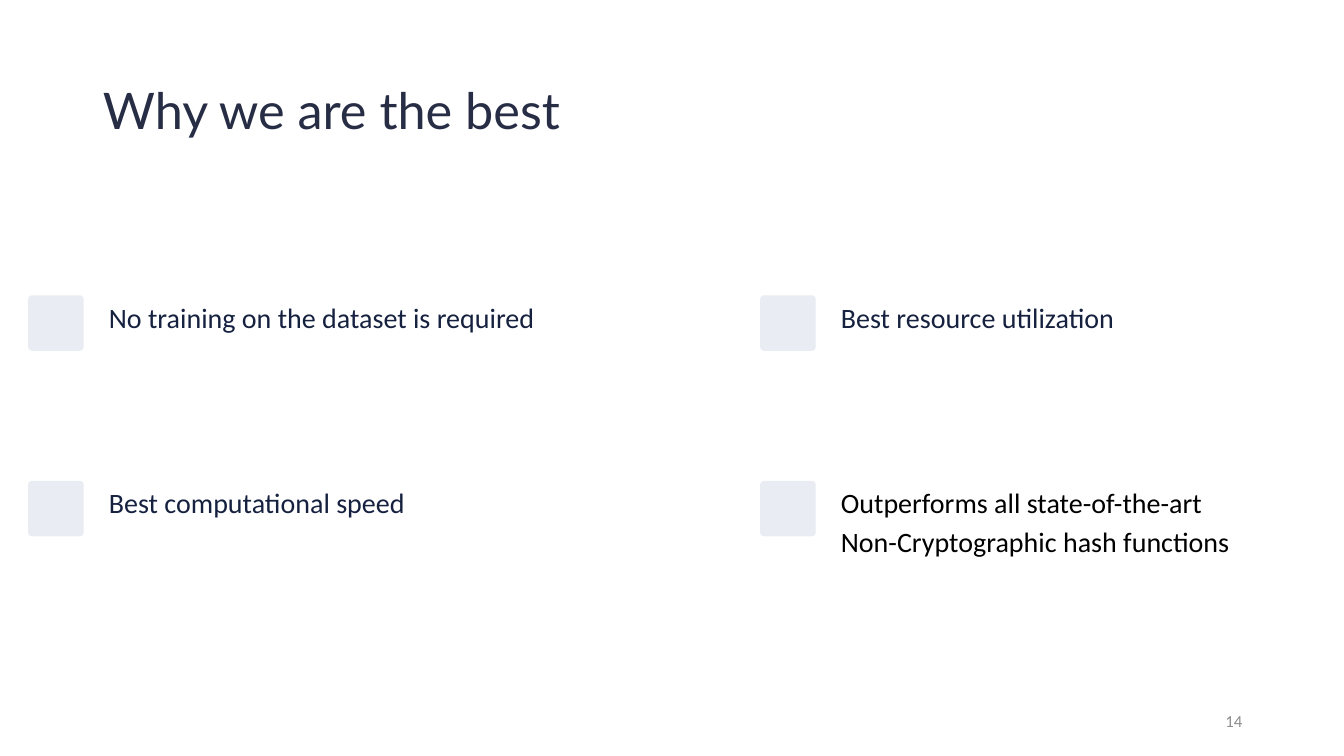
import dataclasses

import pptx
import pptx.dml.color
import pptx.enum.shapes
import pptx.enum.text
import pptx.slide
import pptx.text.text
import pptx.util

Inches = pptx.util.Inches
Pt = pptx.util.Pt
RGBColor = pptx.dml.color.RGBColor
ALIGN = pptx.enum.text.PP_ALIGN
ANCHOR = pptx.enum.text.MSO_ANCHOR

INK = RGBColor(0x27, 0x2D, 0x45)
NAVY = RGBColor(0x15, 0x21, 0x3F)
BLACK = RGBColor(0x00, 0x00, 0x00)
GREY = RGBColor(0x8C, 0x8C, 0x8C)
PALE = RGBColor(0xE9, 0xEC, 0xF2)

# Grid of reasons
LEFT, TOP = 0.28, 2.93
COL_STEP, ROW_STEP = 7.26, 1.84
TILE = 0.55
INDENT = 0.8


@dataclasses.dataclass(frozen=True)
class Reason:
    col: int
    row: int
    text: str
    color: RGBColor = NAVY
    width: float = 3.08
    height: float = 0.38


REASONS = [
    Reason(0, 0, "No training on the dataset is required"),
    Reason(1, 0, "Best resource utilization"),
    Reason(0, 1, "Best computational speed"),
    Reason(1, 1, "Outperforms all state-of-the-art\nNon-Cryptographic hash functions",
           BLACK, 4.6, 0.82),
]


def write(frame: pptx.text.text.TextFrame, text: str, *, size: float,
          color: RGBColor, font: str = "Calibri", align: ALIGN = ALIGN.LEFT,
          anchor: ANCHOR = ANCHOR.TOP, wrap: bool = True,
          space: float | pptx.util.Length | None = None,
          inset: float | None = None) -> None:
    """Fill a frame with one paragraph per line of text."""
    frame.text = text
    frame.auto_size = pptx.enum.text.MSO_AUTO_SIZE.NONE
    frame.word_wrap = wrap
    frame.vertical_anchor = anchor
    if inset is not None:
        frame.margin_left = frame.margin_right = Inches(inset)
        frame.margin_top = frame.margin_bottom = Inches(inset)
    for para in frame.paragraphs:
        para.alignment = align
        para.line_spacing = space
        for run in para.runs:
            run.font.name = font
            run.font.size = Pt(size)
            run.font.color.rgb = color


def add_reason(slide: pptx.slide.Slide, item: Reason) -> None:
    """Draw the tile and the text beside it."""
    left = LEFT + item.col * COL_STEP
    top = TOP + item.row * ROW_STEP
    tile = slide.shapes.add_shape(
        pptx.enum.shapes.MSO_SHAPE.ROUNDED_RECTANGLE,
        Inches(left), Inches(top), Inches(TILE), Inches(TILE))
    tile.adjustments[0] = 0.067
    tile.shadow.inherit = False
    tile.fill.solid()
    tile.fill.fore_color.rgb = PALE
    tile.line.fill.background()

    box = slide.shapes.add_textbox(
        Inches(left + INDENT), Inches(top), Inches(item.width), Inches(item.height))
    write(box.text_frame, item.text, size=20, color=item.color,
          wrap=False, space=Pt(27.5), inset=0)


def main() -> None:
    deck = pptx.Presentation()
    deck.slide_width, deck.slide_height = Inches(13.33), Inches(7.5)
    slide = deck.slides.add_slide(deck.slide_layouts.get_by_name("Title Only"))

    # Title
    title = slide.shapes.title
    title.left, title.top = Inches(0.92), Inches(0.4)
    title.width, title.height = Inches(11.5), Inches(1.45)
    write(title.text_frame, "Why we are the best", size=36, color=INK,
          font="Lato", anchor=ANCHOR.MIDDLE, space=0.9)

    # Page number
    page = slide.shapes.add_textbox(Inches(9.42), Inches(6.95), Inches(3), Inches(0.4))
    write(page.text_frame, "14", size=12, color=GREY,
          align=ALIGN.RIGHT, anchor=ANCHOR.MIDDLE)

    # Reasons
    for item in REASONS:
        add_reason(slide, item)

    deck.save("out.pptx")


if __name__ == "__main__":
    main()
